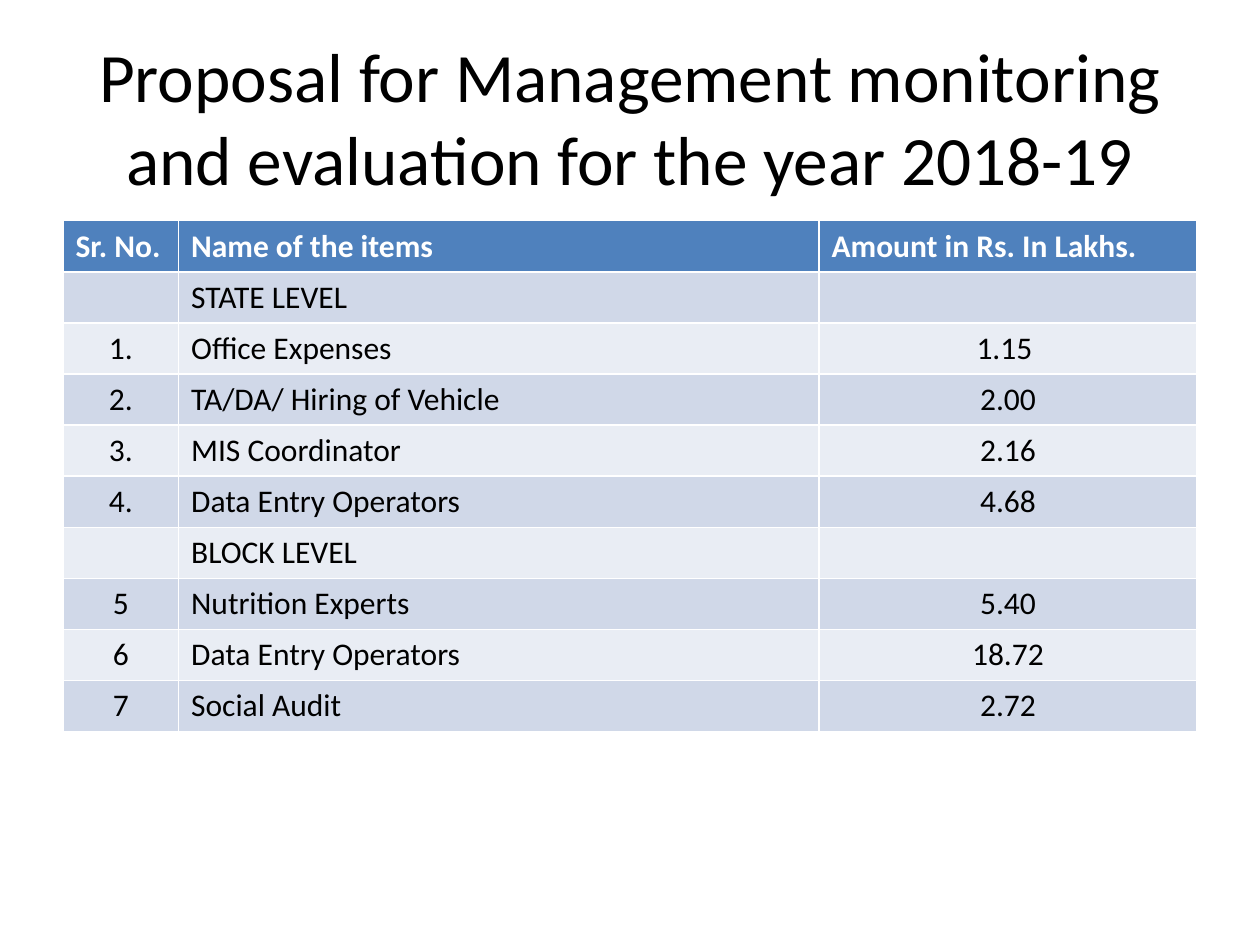
"""Build the management, monitoring and evaluation proposal slide."""
import pptx
import pptx.dml.color
import pptx.enum.text
import pptx.util

Cm = pptx.util.Cm
Pt = pptx.util.Pt
ALIGN = pptx.enum.text.PP_ALIGN
ANCHOR = pptx.enum.text.MSO_ANCHOR

TITLE = "Proposal for Management monitoring and evaluation for the year 2018-19"
HEADER = ("Sr. No.", "Name of the items", "Amount in Rs. In Lakhs.")
ITEMS = [
    ("", "STATE LEVEL", ""),
    ("1.", "Office Expenses", "1.15 "),
    ("2.", "TA/DA/ Hiring of Vehicle", "2.00"),
    ("3.", "MIS Coordinator", "2.16"),
    ("4.", "Data Entry Operators", "4.68"),
    ("", "BLOCK LEVEL", ""),
    ("5", "Nutrition Experts", "5.40"),
    ("6", "Data Entry Operators", "18.72"),
    ("7", "Social Audit", "2.72"),
]
COLORS = {"text": "000000", "header_text": "FFFFFF", "header": "4F81BD",
          "odd": "D0D8E8", "even": "E9EDF4"}
FONT = "Calibri"
LEFT, WIDTH = 1.27, 22.86
COLUMN_WIDTHS = (2.33, 12.91, 7.62)
COLUMN_ALIGNMENTS = (ALIGN.CENTER, ALIGN.LEFT, ALIGN.CENTER)
ROW_HEIGHT = 1.03


def rgb(name):
    return pptx.dml.color.RGBColor.from_string(COLORS[name])


def format_paragraph(paragraph, size, color, alignment, bold=False):
    paragraph.alignment = alignment
    font = paragraph.font
    font.name, font.size, font.bold = FONT, Pt(size), bold
    font.color.rgb = rgb(color)


def add_title(slide):
    title = slide.shapes.title
    title.left, title.top = Cm(LEFT), Cm(0.76)
    title.width, title.height = Cm(WIDTH), Cm(3.18)
    frame = title.text_frame
    frame.text = TITLE
    frame.word_wrap = True
    frame.auto_size = pptx.enum.text.MSO_AUTO_SIZE.NONE
    frame.vertical_anchor = ANCHOR.MIDDLE
    format_paragraph(frame.paragraphs[0], 39.6, "text", ALIGN.CENTER)


def add_items_table(slide):
    rows = [HEADER, *ITEMS]
    table = slide.shapes.add_table(
        len(rows), len(HEADER), Cm(LEFT), Cm(4.45),
        Cm(WIDTH), Cm(ROW_HEIGHT * len(rows))).table
    for column, width in zip(table.columns, COLUMN_WIDTHS):
        column.width = Cm(width)
    for row_index, values in enumerate(rows):
        is_header = row_index == 0
        fill = "header" if is_header else ("even", "odd")[row_index % 2]
        for column_index, value in enumerate(values):
            cell = table.cell(row_index, column_index)
            cell.text = value
            cell.fill.solid()
            cell.fill.fore_color.rgb = rgb(fill)
            format_paragraph(
                cell.text_frame.paragraphs[0], 18,
                "header_text" if is_header else "text",
                ALIGN.LEFT if is_header else COLUMN_ALIGNMENTS[column_index],
                is_header)


def main():
    presentation = pptx.Presentation()
    presentation.slide_width, presentation.slide_height = Cm(25.4), Cm(19.05)
    slide = presentation.slides.add_slide(presentation.slide_layouts[5])
    add_title(slide)
    add_items_table(slide)
    presentation.save("out.pptx")


if __name__ == "__main__":
    main()
